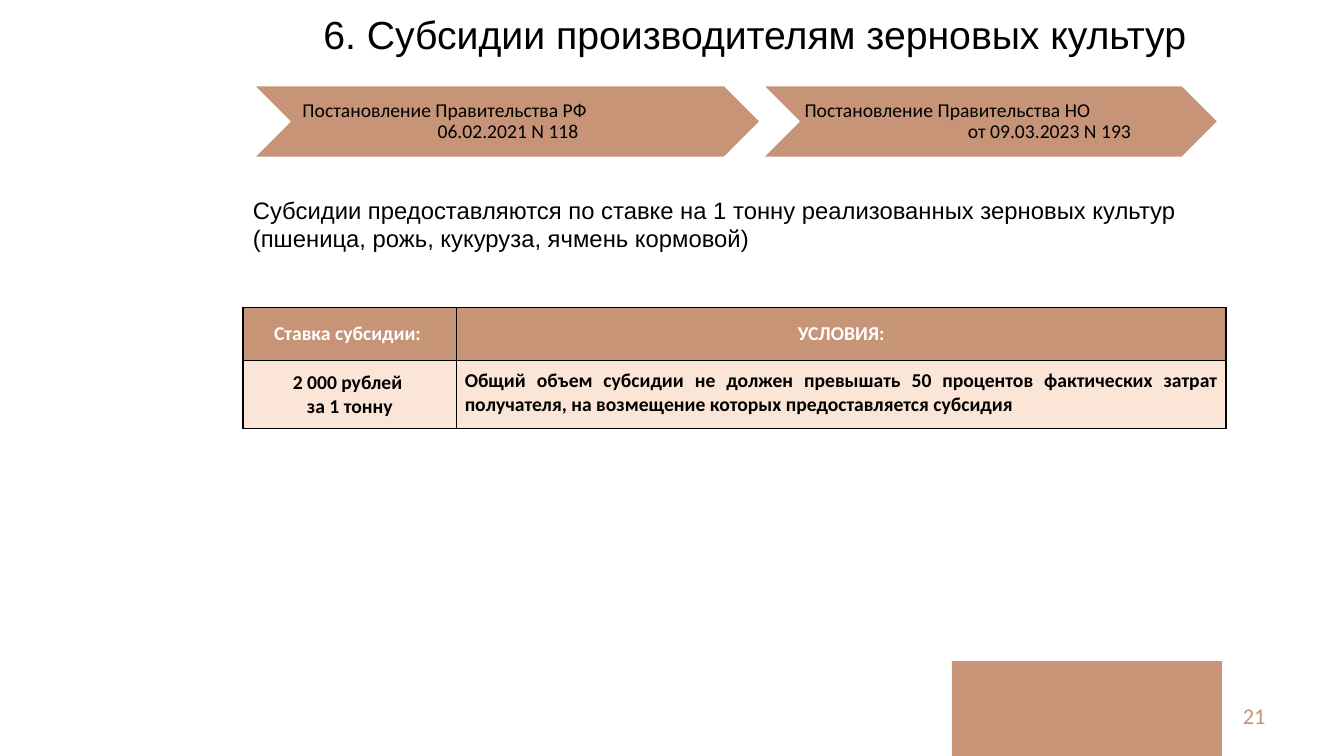
from dataclasses import dataclass
from lxml.etree import SubElement
from pptx import Presentation
from pptx.dml.color import RGBColor
from pptx.enum.shapes import MSO_SHAPE as Shape
from pptx.enum.text import MSO_ANCHOR as Anchor, PP_ALIGN as Align
from pptx.oxml.ns import qn
from pptx.util import Inches, Pt


@dataclass(frozen=True)
class Theme:
    clay: str = "C79478"
    peach: str = "FBE5D6"
    black: str = "000000"
    white: str = "FFFFFF"
    heading: str = "Arial"
    body: str = "Calibri"
    title_size: int = 28
    text_size: int = 17
    number_size: int = 16
    label_size: int = 14


theme = Theme()


def write(para, text, font, size, color, align=Align.LEFT, bold=False):
    para.alignment = align
    span = para.add_run()
    span.text = text
    span.font.name = font
    span.font.size = Pt(size)
    span.font.bold = bold
    span.font.color.rgb = RGBColor.from_string(color)


def add_box(page, left, top, width, height, anchor=Anchor.TOP):
    box = page.shapes.add_textbox(Inches(left), Inches(top), Inches(width), Inches(height))
    box.text_frame.word_wrap = True
    box.text_frame.vertical_anchor = anchor
    return box.text_frame


deck = Presentation()
deck.slide_width = Inches(13.33)
deck.slide_height = Inches(7.5)
page = deck.slides.add_slide(deck.slide_layouts[6])

corner = page.shapes.add_shape(Shape.RECTANGLE, Inches(9.44), Inches(6.56), Inches(2.68), Inches(0.94))
corner.shadow.inherit = False
corner.fill.solid()
corner.fill.fore_color.rgb = RGBColor.from_string(theme.clay)
corner.line.fill.background()

number = add_box(page, 9.65, 6.9, 3, 0.4, Anchor.MIDDLE)
write(number.paragraphs[0], "21", theme.body, theme.number_size, theme.clay, Align.RIGHT)

title = add_box(page, 2.89, 0.05, 9.19, 0.57)
write(title.paragraphs[0], "6. Субсидии производителям зерновых культур",
      theme.heading, theme.title_size, theme.black, Align.CENTER)

decrees = [
    (2.52, 5.02, [("Постановление Правительства РФ", 0.07), ("06.02.2021 N 118", 1.41)]),
    (7.57, 4.51, [("Постановление Правительства НО", 0), ("от 09.03.2023 N 193", 1.62)]),
]
for left, width, lines in decrees:
    chevron = page.shapes.add_shape(Shape.CHEVRON, Inches(left), Inches(0.85), Inches(width), Inches(0.71))
    chevron.shadow.inherit = False
    chevron.fill.solid()
    chevron.fill.fore_color.rgb = RGBColor.from_string(theme.clay)
    chevron.line.color.rgb = RGBColor.from_string(theme.white)
    chevron.line.width = Pt(1)

    label = add_box(page, left + 0.35, 0.85, width - 0.71, 0.71, Anchor.MIDDLE)
    label.margin_left = Inches(0.06)
    label.margin_right = label.margin_top = label.margin_bottom = Inches(0.02)
    for index, (text, indent) in enumerate(lines):
        para = label.add_paragraph() if index else label.paragraphs[0]
        para._p.get_or_add_pPr().set("marL", str(Inches(indent)))
        para.line_spacing = 0.9
        write(para, text, theme.body, theme.label_size, theme.black)

summary = add_box(page, 2.41, 1.89, 9.87, 0.67)
write(summary.paragraphs[0],
      "Субсидии предоставляются по ставке на 1 тонну реализованных зерновых культур "
      "(пшеница, рожь, кукуруза, ячмень кормовой)",
      theme.heading, theme.text_size, theme.black)

rows = [
    (0.53, theme.clay, theme.white, [
        (["Ставка субсидии: "], Align.CENTER, Anchor.MIDDLE),
        (["УСЛОВИЯ:"], Align.CENTER, Anchor.MIDDLE),
    ]),
    (0.67, theme.peach, theme.black, [
        (["2 000 рублей ", "за 1 тонну"], Align.CENTER, Anchor.MIDDLE),
        (["Общий объем субсидии не должен превышать 50 процентов фактических затрат "
          "получателя, на возмещение которых предоставляется субсидия"], Align.JUSTIFY, Anchor.TOP),
    ]),
]
table = page.shapes.add_table(2, 2, Inches(2.41), Inches(3.05), Inches(9.76), Inches(1.2)).table
for column, width in zip(table.columns, (2.12, 7.63)):
    column.width = Inches(width)
for row_index, (height, fill, color, cells) in enumerate(rows):
    table.rows[row_index].height = Inches(height)
    for column_index, (lines, align, anchor) in enumerate(cells):
        cell = table.cell(row_index, column_index)
        cell.vertical_anchor = anchor
        cell.margin_left = cell.margin_right = Inches(0.08)
        cell.margin_top = cell.margin_bottom = Inches(0.08)
        for side in ("a:lnL", "a:lnR", "a:lnT", "a:lnB"):
            border = SubElement(cell._tc.get_or_add_tcPr(), qn(side), w=str(Pt(1)))
            paint = SubElement(border, qn("a:solidFill"))
            SubElement(paint, qn("a:srgbClr"), val=theme.black)
        cell.fill.solid()
        cell.fill.fore_color.rgb = RGBColor.from_string(fill)
        for index, text in enumerate(lines):
            para = cell.text_frame.add_paragraph() if index else cell.text_frame.paragraphs[0]
            write(para, text, theme.body, theme.label_size, color, align, True)

deck.save("out.pptx")
